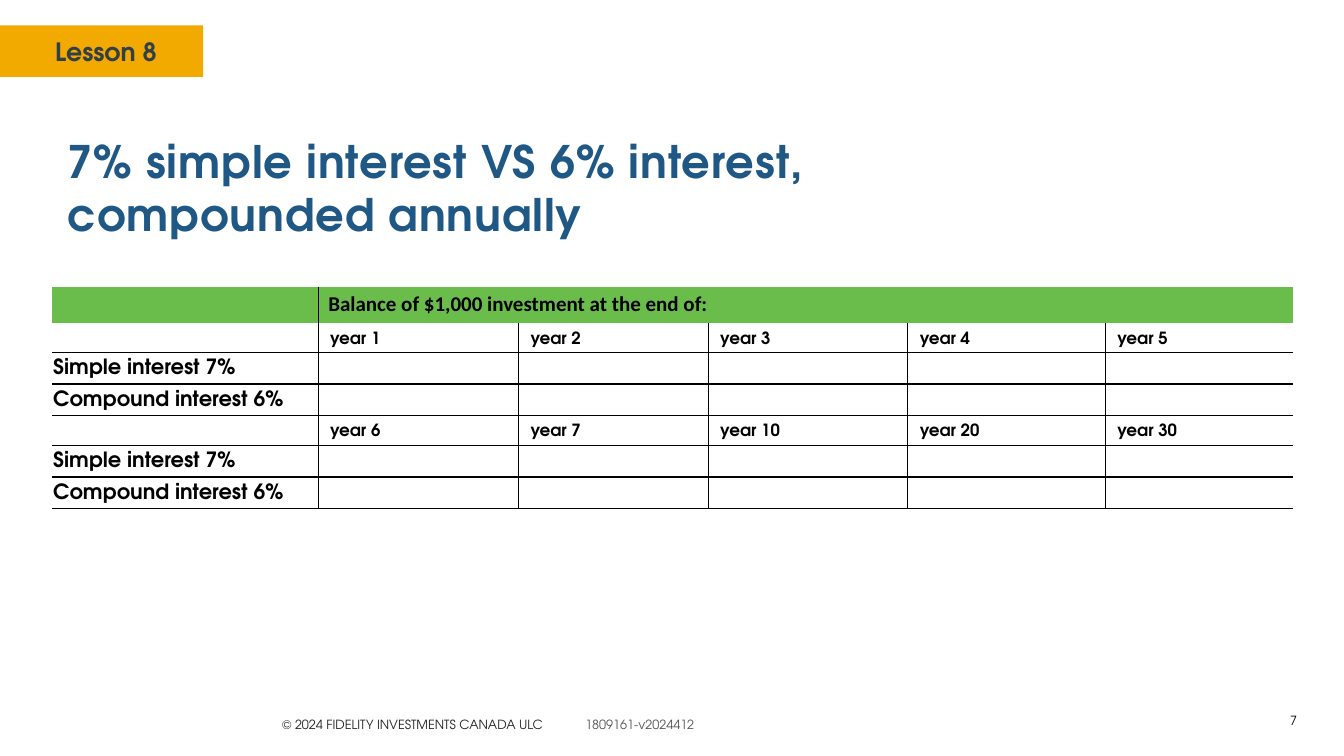
import pptx
import pptx.util
import pptx.dml.color
import pptx.enum.text
import pptx.enum.shapes
import pptx.oxml.ns
import lxml.etree

Cm = pptx.util.Cm
Pt = pptx.util.Pt
qn = pptx.oxml.ns.qn
anchor = pptx.enum.text.MSO_ANCHOR
align = pptx.enum.text.PP_ALIGN
hues = {"gold": "F2A900", "slate": "333F48", "blue": "205885", "green": "6ABD4A",
        "black": "000000", "ink": "222222", "grey": "545454"}
face = "TeX Gyre Adventor"


def put(frame, text, size=12, hue="black", bold=False, font=face, side=align.LEFT):
    para = frame.paragraphs[0]
    para.alignment = side
    run = para.add_run()
    run.text = text
    run.font.size = Pt(size)
    run.font.name = font
    run.font.bold = bold
    run.font.color.rgb = pptx.dml.color.RGBColor.from_string(hues[hue])
    return run


def rule(cell, edge):
    line = lxml.etree.Element(qn("a:" + edge), w="12700")
    fill = lxml.etree.SubElement(line, qn("a:solidFill"))
    lxml.etree.SubElement(fill, qn("a:srgbClr"), val=hues["black"])
    props = cell._tc.get_or_add_tcPr()
    count = len(props.findall(qn("a:lnL")) + props.findall(qn("a:lnR")) + props.findall(qn("a:lnT")))
    props.insert(count, line)


deck = pptx.Presentation()
deck.slide_width = Cm(33.87)
deck.slide_height = Cm(19.05)
slide = deck.slides.add_slide(deck.slide_layouts[5])

band = slide.shapes.add_shape(pptx.enum.shapes.MSO_SHAPE.RECTANGLE, 0, Cm(0.64), Cm(5.12), Cm(1.3))
band.shadow.inherit = False
band.fill.solid()
band.fill.fore_color.rgb = pptx.dml.color.RGBColor.from_string(hues["gold"])
band.line.fill.background()

badge = slide.shapes.add_textbox(Cm(1.14), Cm(0.79), Cm(3.33), Cm(1.02)).text_frame
badge.word_wrap = True
put(badge, "Lesson 8", size=18, hue="slate", bold=True)

title = slide.shapes.title
title.left, title.top, title.width, title.height = Cm(1.45), Cm(3.23), Cm(30.99), Cm(1.85)
title.text_frame.vertical_anchor = anchor.TOP
title.text_frame.auto_size = pptx.enum.text.MSO_AUTO_SIZE.NONE
head = put(title.text_frame, "7% simple interest VS 6% interest,", size=32, hue="blue", bold=True)
title.text_frame.paragraphs[0].add_line_break()
tail = put(title.text_frame, "compounded annually", size=32, hue="blue", bold=True)
for run in (head, tail):
    run.font._element.set("spc", "60")

years = [["year 1", "year 2", "year 3", "year 4", "year 5"],
         ["year 6", "year 7", "year 10", "year 20", "year 30"]]
rows = [["", "Balance of $1,000 investment at the end of:", "", "", "", ""]]
for group in years:
    rows += [[""] + group, ["Simple interest 7%"] + [""] * 5, ["Compound interest 6%"] + [""] * 5]

frame = slide.shapes.add_table(7, 6, Cm(1.31), Cm(7.22), Cm(31.27), Cm(5.41))
frame._element.find(".//" + qn("a:tableStyleId")).text = "{2D5ABB26-0587-4C30-8999-92F81FD0307C}"
table = frame.table
table.first_row = table.horz_banding = False
for col, width in zip(table.columns, [6.71, 5.05, 4.78, 5.03, 4.98, 4.72]):
    col.width = Cm(width)
table.cell(0, 1).merge(table.cell(0, 5))

for r, texts in enumerate(rows):
    table.rows[r].height = Cm(0.75 if r else 0.91)
    for c, text in enumerate(texts):
        cell = table.cell(r, c)
        if r:
            cell.fill.background()
            cell.vertical_anchor = anchor.BOTTOM
            cell.margin_left = Cm(0.3 if c else 0.03)
            cell.margin_right = cell.margin_top = Cm(0.03)
            cell.margin_bottom = Cm(0.13)
        else:
            cell.fill.solid()
            cell.fill.fore_color.rgb = pptx.dml.color.RGBColor.from_string(hues["green"])
        if text:
            put(cell.text_frame, text, size=12 if r and c else 15, bold=True, font=face if r else "Calibri")
        else:
            cell.text_frame.paragraphs[0]._p.get_or_add_endParaRPr().set("sz", "1200")
        if c and (r or c == 1):
            rule(cell, "lnL")
        if c < 5 and (r or c == 0):
            rule(cell, "lnR")
        if r > 1:
            rule(cell, "lnT")
        if r:
            rule(cell, "lnB")

foot = slide.shapes.add_textbox(Cm(6.86), Cm(17.93), Cm(11.5), Cm(0.64)).text_frame
foot.word_wrap = True
props = foot.paragraphs[0]._p.get_or_add_pPr()
tabs = lxml.etree.SubElement(props, qn("a:tabLst"))
lxml.etree.SubElement(tabs, qn("a:tab"), pos=str(Cm(7.64)), algn="l")
put(foot, "© 2024 FIDELITY INVESTMENTS CANADA ULC\t", size=9, hue="ink")
put(foot, "1809161-v2024412", size=9, hue="grey")

page = slide.shapes.add_textbox(Cm(30.91), Cm(17.93), Cm(1.78), Cm(0.46)).text_frame
page.word_wrap = True
page.margin_right = page.margin_top = page.margin_bottom = 0
page.vertical_anchor = anchor.MIDDLE
put(page, "7", size=9, side=align.RIGHT)

deck.save("out.pptx")
